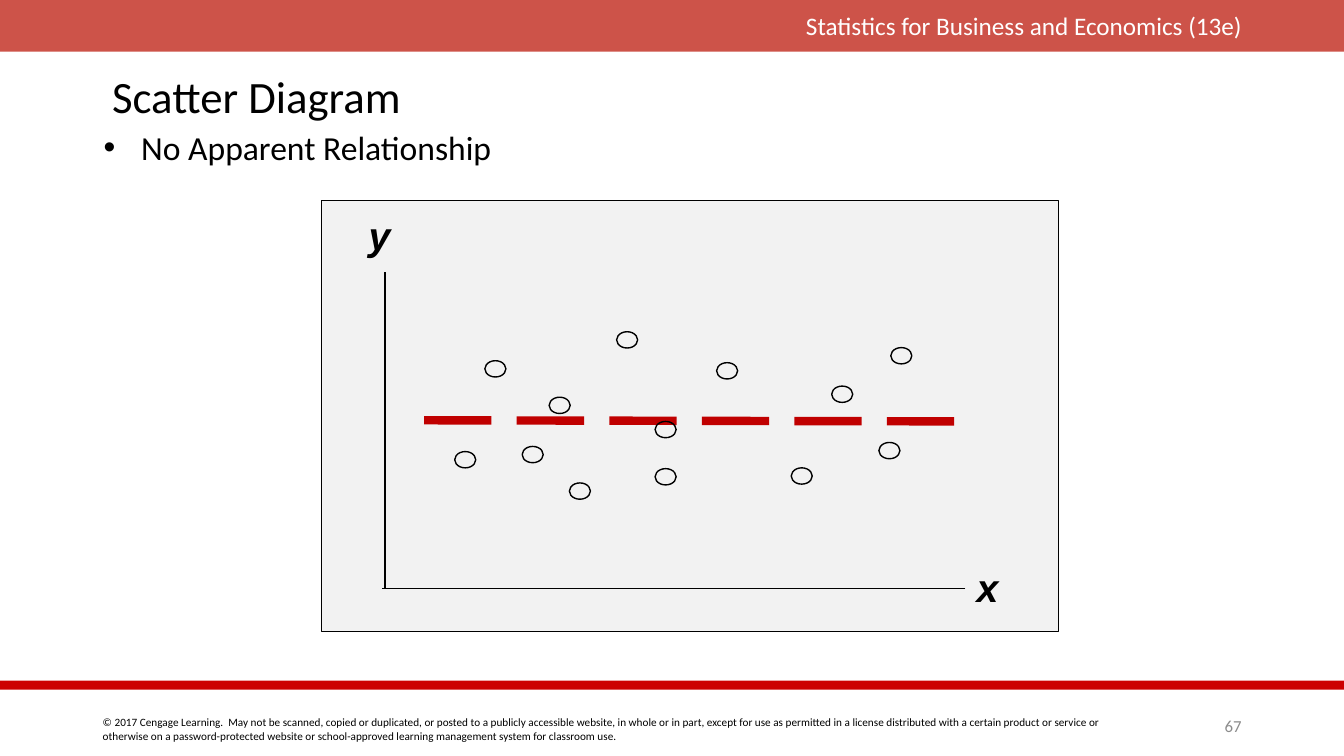
from dataclasses import dataclass

from lxml import etree
from pptx import Presentation, util as u
from pptx.dml.color import RGBColor
from pptx.enum import dml, shapes, text
from pptx.oxml.ns import qn

BLACK = "000000"
POINT_WIDTH, POINT_HEIGHT = 0.53, 0.41


@dataclass
class Box:
    left: float
    top: float
    width: float
    height: float

    def lengths(self) -> list:
        return [u.Cm(value) for value in (self.left, self.top, self.width, self.height)]


@dataclass
class Label:
    words: str
    box: Box
    size: float
    color: str = BLACK
    font: str = "Calibri"
    emphasis: bool = False
    wrap: bool = True
    align: text.PP_ALIGN = text.PP_ALIGN.LEFT
    anchor: text.MSO_ANCHOR = text.MSO_ANCHOR.TOP
    spacing: float = 1.0
    bullet: bool = False


@dataclass
class Line:
    start: tuple[float, float]
    end: tuple[float, float]
    color: str = BLACK
    width: float = 1
    dashed: bool = False


def rgb(color: str) -> RGBColor:
    return RGBColor.from_string(color)


def add_shape(slide, kind, box: Box, fill: str = "", outline: float = 0):
    shape = slide.shapes.add_shape(kind, *box.lengths())
    shape.shadow.inherit = False
    if fill:
        shape.fill.solid()
        shape.fill.fore_color.rgb = rgb(fill)
    else:
        shape.fill.background()
    if outline:
        shape.line.color.rgb = rgb(BLACK)
        shape.line.width = u.Pt(outline)
    else:
        shape.line.fill.background()
    return shape


def add_line(slide, line: Line) -> None:
    ends = [u.Cm(value) for value in (*line.start, *line.end)]
    connector = slide.shapes.add_connector(shapes.MSO_CONNECTOR.STRAIGHT, *ends)
    connector.line.color.rgb = rgb(line.color)
    connector.line.width = u.Pt(line.width)
    if line.dashed:
        connector.line.dash_style = dml.MSO_LINE.LONG_DASH
    etree.SubElement(connector._element.spPr, qn("a:effectLst"))


def write_label(shape, label: Label) -> None:
    shape.left, shape.top, shape.width, shape.height = label.box.lengths()
    frame = shape.text_frame
    frame.text = label.words
    frame.word_wrap = label.wrap
    frame.auto_size = text.MSO_AUTO_SIZE.NONE
    frame.vertical_anchor = label.anchor
    paragraph = frame.paragraphs[0]
    paragraph.alignment = label.align
    paragraph.line_spacing = label.spacing
    if label.bullet:
        properties = paragraph._p.get_or_add_pPr()
        properties.set("marL", str(u.Cm(0.95)))
        properties.set("indent", str(-u.Cm(0.95)))
        etree.SubElement(properties, qn("a:buFont"), typeface="Arial")
        etree.SubElement(properties, qn("a:buChar"), char="•")
    font = paragraph.font
    font.name = label.font
    font.size = u.Pt(label.size)
    font.bold = font.italic = label.emphasis
    font.color.rgb = rgb(label.color)


def axis_label(words: str, left: float, top: float) -> Label:
    return Label(words, Box(left, top, 1.07, 1.45), 28, font="Arial", emphasis=True, wrap=False)


TITLE = Label("Scatter Diagram", Box(2.57, 1.3, 28.73, 2.41), 32,
              anchor=text.MSO_ANCHOR.MIDDLE, spacing=0.9)
LABELS = [
    Label("© 2017 Cengage Learning.  May not be scanned, copied or duplicated, or posted to a "
          "publicly accessible website, in whole or in part, except for use as permitted in a "
          "license distributed with a certain product or service or otherwise on a "
          "password-protected website or school-approved learning management system for "
          "classroom use.", Box(2.34, 17.91, 26.24, 0.94), 8),
    Label("Statistics for Business and Economics (13e)", Box(19.46, 0.13, 12.09, 1.02), 18,
          "FFFFFF", align=text.PP_ALIGN.RIGHT),
    Label("No Apparent Relationship", Box(2.36, 3.18, 18.87, 1.57), 24, spacing=0.9, bullet=True),
    axis_label("x", 24.36, 14.07),
    axis_label("y", 9.04, 5.21),
    Label("67", Box(29.79, 17.91, 1.75, 0.76), 12, "8C8C8C",
          align=text.PP_ALIGN.RIGHT, anchor=text.MSO_ANCHOR.MIDDLE),
]
LINES = [
    Line((10.69, 10.59), (24.36, 10.62), "C00000", 6, dashed=True),
    Line((9.7, 6.86), (9.7, 14.81)),
    Line((24.33, 14.83), (9.63, 14.83)),
]
POINTS = [
    (22.45, 8.76), (22.15, 11.15), (15.54, 8.36), (13.16, 11.25), (11.46, 11.38),
    (18.06, 9.14), (16.51, 10.62), (20.96, 9.73), (13.84, 10.01), (14.35, 12.17),
    (12.22, 9.09), (16.51, 11.81), (19.94, 11.79),
]


def main() -> None:
    presentation = Presentation()
    presentation.slide_width = u.Cm(33.87)
    presentation.slide_height = u.Cm(19.05)
    slide = presentation.slides.add_slide(presentation.slide_layouts[5])
    write_label(slide.shapes.title, TITLE)

    rectangle = shapes.MSO_SHAPE.RECTANGLE
    header = add_shape(slide, rectangle, Box(0, 0, 33.87, 1.3), "BF2317")
    header_color = header.fill._xPr.find(qn("a:solidFill"))[0]
    etree.SubElement(header_color, qn("a:alpha"), val="78000")
    add_shape(slide, rectangle, Box(0, 17.15, 33.87, 0.23), "CC0000")
    add_shape(slide, rectangle, Box(8.1, 5.05, 18.57, 10.85), "F2F2F2", 0.5)

    for line in LINES:
        add_line(slide, line)
    for left, top in POINTS:
        box = Box(left, top, POINT_WIDTH, POINT_HEIGHT)
        add_shape(slide, shapes.MSO_SHAPE.OVAL, box, outline=1)
    for label in LABELS:
        write_label(slide.shapes.add_textbox(*label.box.lengths()), label)

    presentation.save("out.pptx")


if __name__ == "__main__":
    main()
